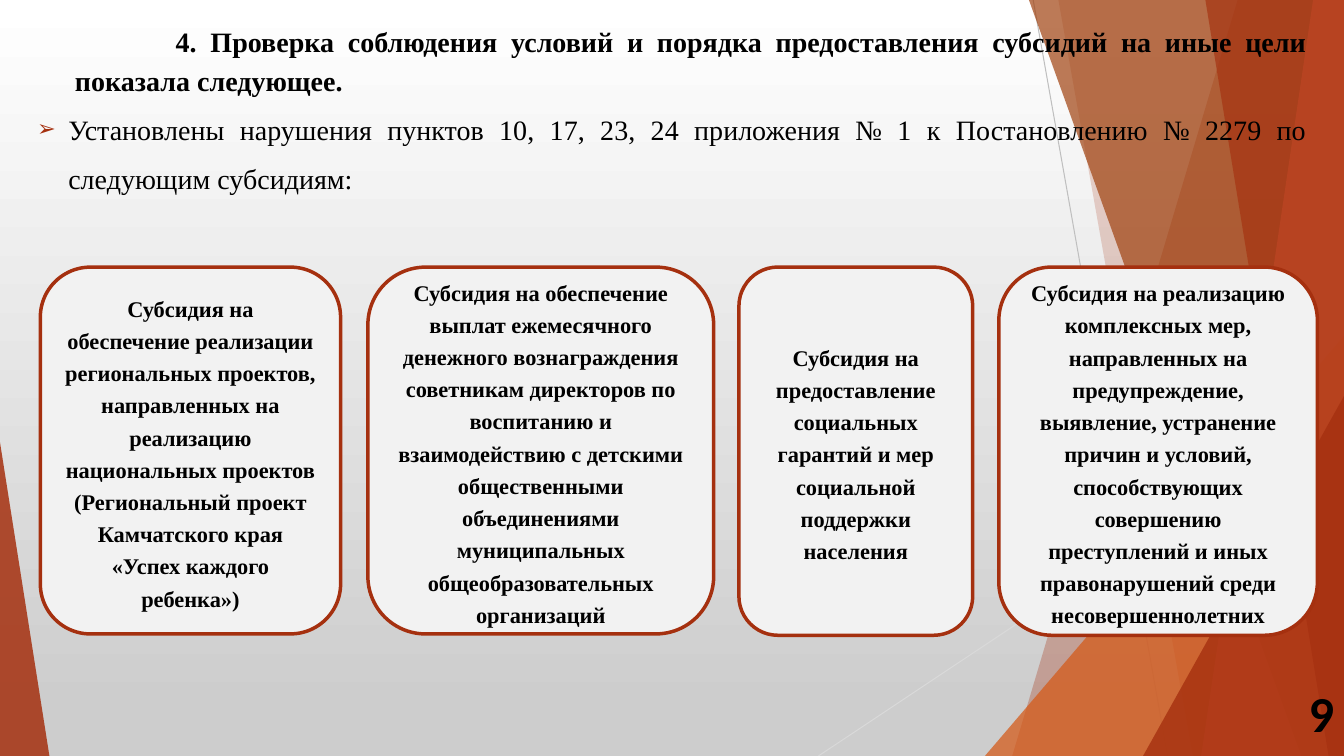
from lxml import etree
from pptx import Presentation
from pptx.dml.color import RGBColor
from pptx.enum.shapes import MSO_CONNECTOR, MSO_SHAPE
from pptx.enum.text import MSO_ANCHOR, PP_ALIGN
from pptx.oxml.ns import qn
from pptx.util import Pt

WIDTH, HEIGHT = 960, 540
SERIF = "Times New Roman"
COLORS = {
    "top": "FFFFFF", "bottom": "CDCDCD", "text": "000000", "card": "F2F2F2",
    "brick": "A5300F", "orange": "D55816", "brown": "A04210", "coral": "EE6E4A",
    "ray_dark": "BFBFBF", "ray_light": "D9D9D9",
}
CARD_TOP = 190.8
CARDS = [  # left, width, height, text
    (28.8, 214.5, 262,
     "Субсидия на обеспечение реализации региональных проектов, направленных на "
     "реализацию национальных проектов (Региональный проект Камчатского края "
     "«Успех каждого ребенка»)"),
    (262.8, 247, 262,
     "Субсидия на обеспечение выплат ежемесячного денежного вознаграждения "
     "советникам директоров по воспитанию и взаимодействию с детскими "
     "общественными объединениями муниципальных общеобразовательных организаций"),
    (527.8, 167, 263,
     "Субсидия на предоставление социальных гарантий и мер социальной поддержки "
     "населения"),
    (713.5, 227.5, 263,
     "Субсидия на реализацию комплексных мер, направленных на предупреждение, "
     "выявление, устранение причин и условий, способствующих совершению "
     "преступлений и иных правонарушений среди несовершеннолетних"),
]


def rgb(name):
    return RGBColor.from_string(COLORS[name])


def set_all(target, values):
    for name, value in values.items():
        setattr(target, name, value)


def paint_background(page):
    fill = page.background.fill
    fill.gradient()
    fill.gradient_angle = 270
    for stop, position, color in zip(fill.gradient_stops, (0, 0.94), ("top", "bottom")):
        stop.position = position
        stop.color.rgb = rgb(color)


def fill_glass(shape, color, opacity):
    """Fill a borderless shape with a colour at an opacity in percent."""
    shape.shadow.inherit = False
    shape.fill.solid()
    shape.fill.fore_color.rgb = rgb(color)
    shape.line.fill.background()
    tint = shape.fill._xPr.find(qn("a:solidFill"))[0]
    etree.SubElement(tint, qn("a:alpha"), val=str(opacity * 1000))


def add_ray(page, start, end, color):
    ray = page.shapes.add_connector(
        MSO_CONNECTOR.STRAIGHT, *(Pt(value) for value in start + end))
    ray.line.width = Pt(0.75)
    ray.line.color.rgb = rgb(color)
    etree.SubElement(ray._element.spPr, qn("a:effectLst"))


def add_facet(page, top_left, bottom_left, color, opacity):
    """Add a full-height facet that reaches the right edge of the page."""
    outline = page.shapes.build_freeform(Pt(top_left), 0)
    corners = [(WIDTH, 0), (WIDTH, HEIGHT), (bottom_left, HEIGHT)]
    outline.add_line_segments([(Pt(x), Pt(y)) for x, y in corners], close=True)
    fill_glass(outline.convert_to_shape(), color, opacity)


def add_wedge(page, left, top, width, apex, color, opacity):
    """Add a triangle that stands on the bottom edge of the page."""
    wedge = page.shapes.add_shape(
        MSO_SHAPE.ISOSCELES_TRIANGLE, Pt(left), Pt(top), Pt(width), Pt(HEIGHT - top))
    wedge.adjustments[0] = apex
    fill_glass(wedge, color, opacity)


def add_backdrop(page):
    add_ray(page, (738, 0), (834, HEIGHT), "ray_dark")
    add_ray(page, (WIDTH, 290), (584.6, HEIGHT), "ray_light")
    add_facet(page, 884, 723, "brick", 30)
    add_facet(page, 756, 852, "brick", 20)
    add_wedge(page, 703.5, 240, 256.5, 1, "orange", 72)
    add_facet(page, 735, 929.5, "brown", 70)
    add_facet(page, 938, 858, "coral", 70)
    add_facet(page, 861, 949, "brick", 65)
    add_wedge(page, 816.5, 283, 143.5, 1, "brick", 80)
    add_wedge(page, 0, 316, 35.3, 0, "brick", 85)


def set_indent(para, margin, first_line):
    properties = para._p.get_or_add_pPr()
    properties.set("marL", str(Pt(margin)))
    properties.set("indent", str(Pt(first_line)))
    return properties


def add_arrow_bullet(para):
    properties = set_indent(para, 22.3, -22.3)
    color = etree.SubElement(properties, qn("a:buClr"))
    etree.SubElement(color, qn("a:srgbClr"), val=COLORS["brick"])
    etree.SubElement(properties, qn("a:buSzPct"), val="80000")
    etree.SubElement(properties, qn("a:buFont"), typeface="Arial")
    etree.SubElement(properties, qn("a:buChar"), char="➢")


def write(para, text, size, align, font=SERIF, bold=True, spacing=None):
    para.alignment = align
    para.line_spacing = spacing
    span = para.add_run()
    span.text = text
    set_all(span.font, {"name": font, "size": Pt(size), "bold": bold})
    span.font.color.rgb = rgb("text")


def add_text_box(page, left, top, width, height):
    frame = page.shapes.add_textbox(Pt(left), Pt(top), Pt(width), Pt(height)).text_frame
    frame.word_wrap = True
    return frame


def add_statement(page):
    frame = add_text_box(page, 19.4, 10.8, 921, 524)
    heading = frame.paragraphs[0]
    set_indent(heading, 27, 72)
    write(heading, "4. Проверка соблюдения условий и порядка предоставления субсидий "
          "на иные цели показала следующее.", 20, PP_ALIGN.JUSTIFY, spacing=1.14)
    finding = frame.add_paragraph()
    add_arrow_bullet(finding)
    write(finding, "Установлены нарушения пунктов 10, 17, 23, 24 приложения № 1 "
          "к Постановлению № 2279 по следующим субсидиям:", 20, PP_ALIGN.JUSTIFY,
          bold=False, spacing=1.47)


def add_page_number(page, number):
    frame = add_text_box(page, 900, 467.3, 60, 83.5)
    frame.vertical_anchor = MSO_ANCHOR.MIDDLE
    write(frame.paragraphs[0], number, 36, PP_ALIGN.RIGHT, font="Calibri")


def add_card(page, left, width, height, text):
    card = page.shapes.add_shape(
        MSO_SHAPE.ROUNDED_RECTANGLE, Pt(left), Pt(CARD_TOP), Pt(width), Pt(height))
    card.shadow.inherit = False
    card.fill.solid()
    card.fill.fore_color.rgb = rgb("card")
    card.line.color.rgb = rgb("brick")
    card.line.width = Pt(2.5)
    set_all(card.text_frame, {"word_wrap": True, "vertical_anchor": MSO_ANCHOR.MIDDLE})
    write(card.text_frame.paragraphs[0], text, 16, PP_ALIGN.CENTER, spacing=1.2)


def main():
    deck = Presentation()
    set_all(deck, {"slide_width": Pt(WIDTH), "slide_height": Pt(HEIGHT)})
    page = deck.slides.add_slide(deck.slide_layouts[6])
    paint_background(page)
    add_backdrop(page)
    add_statement(page)
    add_page_number(page, "9")
    for card in CARDS:
        add_card(page, *card)
    deck.save("out.pptx")


if __name__ == "__main__":
    main()
